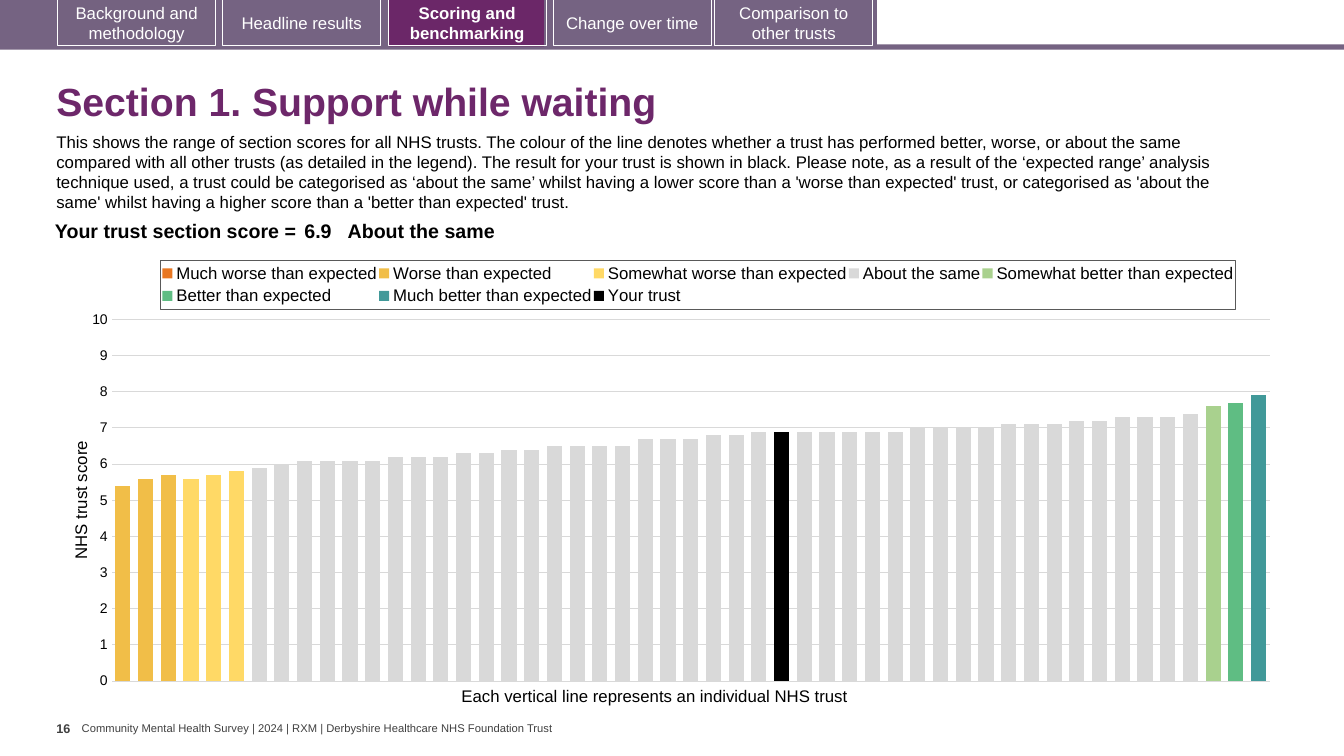
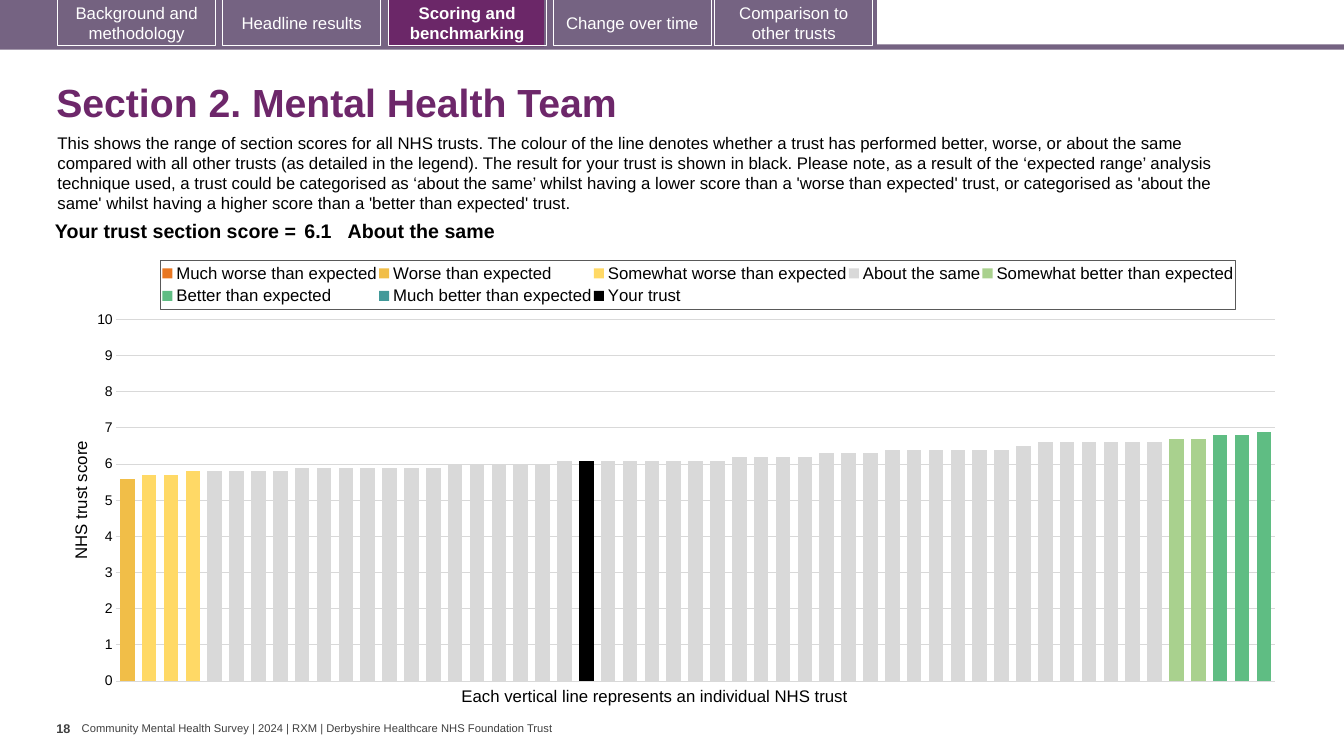
from copy import deepcopy

from lxml import etree
from pptx import Presentation
from pptx import util as u
from pptx.chart import data as chart_data
from pptx.dml import color
from pptx.enum import chart as chart_enum, shapes, text
from pptx.oxml import ns

COLOURS = {
    "band": "756382",
    "tab": "746280",
    "active": "6B2768",
    "title": "6D276A",
    "white": "FFFFFF",
    "black": "000000",
    "footer": "404040",
    "grid": "D9D9D9",
    "legend_border": "595959",
}
SERIES_COLOURS = {
    "Much worse than expected": "E87722",
    "Worse than expected": "F1BE48",
    "Somewhat worse than expected": "FFD966",
    "About the same": "D9D9D9",
    "Somewhat better than expected": "A9D18E",
    "Better than expected": "5FBD83",
    "Much better than expected": "419999",
}
TABS = [
    ("Background and methodology", 1.45, "tab"),
    ("Headline results", 5.61, None),
    ("Scoring and benchmarking", 9.78, None),
    ("Change over time", 13.94, "band"),
    ("Comparison to other trusts", 18.01, "band"),
]
ACTIVE_TAB = "Scoring and benchmarking"
FOOTER = "Community Mental Health Survey | 2024 | RXM | Derbyshire Healthcare NHS Foundation Trust"
EXPLANATION = (
    "This shows the range of section scores for all NHS trusts. The colour of the line denotes "
    "whether a trust has performed better, worse, or about the same compared with all other trusts "
    "(as detailed in the legend). The result for your trust is shown in black. Please note, as a "
    "result of the ‘expected range’ analysis technique used, a trust could be categorised as "
    "‘about the same’ whilst having a lower score than a 'worse than expected' trust, or "
    "categorised as 'about the same' whilst having a higher score than a 'better than expected' trust."
)
SECTIONS = [
    {
        "title": "Section 1. Support while waiting",
        "page": "16",
        "score": 6.9,
        "trust_index": 29,
        "shift": 0,
        "plot_left": 0.036,
        "bands": {
            "Worse than expected": [5.4, 5.6, 5.7],
            "Somewhat worse than expected": [5.6, 5.7, 5.8],
            "About the same": [
                5.9, 6, 6.1, 6.1, 6.1, 6.1, 6.2, 6.2, 6.2, 6.3, 6.3, 6.4, 6.4, 6.5,
                6.5, 6.5, 6.5, 6.7, 6.7, 6.7, 6.8, 6.8, 6.9, 6.9, 6.9, 6.9, 6.9, 6.9,
                6.9, 7, 7, 7, 7, 7.1, 7.1, 7.1, 7.2, 7.2, 7.3, 7.3, 7.3, 7.4,
            ],
            "Somewhat better than expected": [7.6],
            "Better than expected": [7.7],
            "Much better than expected": [7.9],
        },
    },
    {
        "title": "Section 2. Mental Health Team",
        "page": "18",
        "score": 6.1,
        "trust_index": 21,
        "shift": 0.03,
        "plot_left": 0.04,
        "bands": {
            "Worse than expected": [5.6],
            "Somewhat worse than expected": [5.7, 5.7, 5.8],
            "About the same": [
                5.8, 5.8, 5.8, 5.8, 5.9, 5.9, 5.9, 5.9, 5.9, 5.9, 5.9, 6, 6, 6, 6, 6,
                6.1, 6.1, 6.1, 6.1, 6.1, 6.1, 6.1, 6.1, 6.2, 6.2, 6.2, 6.2, 6.3, 6.3,
                6.3, 6.4, 6.4, 6.4, 6.4, 6.4, 6.4, 6.5, 6.6, 6.6, 6.6, 6.6, 6.6, 6.6,
            ],
            "Somewhat better than expected": [6.7, 6.7],
            "Better than expected": [6.8, 6.8, 6.9],
        },
    },
]


def rgb(name):
    return color.RGBColor.from_string(COLOURS.get(name, name))


def box(left, top, width, height):
    return [u.Cm(length) for length in (left, top, width, height)]


def style_font(font, size, colour="black", bold=False, name="Arial"):
    font.name = name
    font.size = u.Pt(size)
    font.bold = bold
    font.color.rgb = rgb(colour)


def add_run(paragraph, content, size, colour="black", bold=False):
    run = paragraph.add_run()
    run.text = content
    style_font(run.font, size, colour, bold)


def add_text(slide, position, content, size, colour="black", bold=False, wrap=True,
             middle=False, insets=(0.25, 0.13), spacing=None):
    frame = slide.shapes.add_textbox(*box(*position)).text_frame
    frame.word_wrap = wrap
    frame.vertical_anchor = text.MSO_ANCHOR.MIDDLE if middle else text.MSO_ANCHOR.TOP
    frame.margin_left = frame.margin_right = u.Cm(insets[0])
    frame.margin_top = frame.margin_bottom = u.Cm(insets[1])
    paragraph = frame.paragraphs[0]
    paragraph.line_spacing = spacing
    add_run(paragraph, content, size, colour, bold)


def add_rectangle(slide, position, fill=None, line=None):
    shape = slide.shapes.add_shape(shapes.MSO_SHAPE.RECTANGLE, *box(*position))
    shape.shadow.inherit = False
    if fill:
        shape.fill.solid()
        shape.fill.fore_color.rgb = rgb(fill)
    else:
        shape.fill.background()
    if line:
        shape.line.color.rgb = rgb(line)
        shape.line.width = u.Pt(0.75)
    else:
        shape.line.fill.background()
    return shape


def add_tab(slide, label, left, fill):
    active = label == ACTIVE_TAB
    if active:
        add_rectangle(slide, (left + 0.02, 0, 3.91, 1.17), "active")
    tab = add_rectangle(slide, (left, -0.03, 3.99, 1.19), fill, "white")
    frame = tab.text_frame
    frame.word_wrap = True
    frame.vertical_anchor = text.MSO_ANCHOR.MIDDLE
    frame.paragraphs[0].alignment = text.PP_ALIGN.CENTER
    add_run(frame.paragraphs[0], label, 12, "white", active)


def add_frame(slide, page):
    add_text(slide, (2.06, 18.19, 12.01, 0.33), FOOTER, 8, "footer",
             wrap=False, middle=True, insets=(0, 0))
    add_rectangle(slide, (0, 1.12, 33.87, 0.13), "band")
    add_rectangle(slide, (0, 0, 22.1, 1.19), "band")
    for label, left, fill in TABS:
        add_tab(slide, label, left, fill)
    add_text(slide, (1.42, 18.03, 0.64, 1.02), page, 9, "footer", True,
             wrap=False, insets=(0, 0.13))


def add_score_table(slide, score):
    table = slide.shapes.add_table(1, 3, *box(0.89, 5.46, 29.69, 0.79)).table
    table.first_row = table.horz_banding = False
    columns = [
        ("Your trust section score =", 6.68, 0.1, text.PP_ALIGN.RIGHT),
        (str(score), 1.19, 0.1, text.PP_ALIGN.LEFT),
        ("About the same", 21.82, 0, text.PP_ALIGN.LEFT),
    ]
    for index, (content, width, inset, alignment) in enumerate(columns):
        table.columns[index].width = u.Cm(width)
        cell = table.cell(0, index)
        cell.fill.background()
        cell.margin_left = cell.margin_right = u.Cm(inset)
        cell.margin_top = cell.margin_bottom = u.Cm(0.1)
        paragraph = cell.text_frame.paragraphs[0]
        paragraph.alignment = alignment
        add_run(paragraph, content, 14, bold=True)


def build_chart_data(section):
    bands = section["bands"]
    total = sum(len(values) for values in bands.values())
    data = chart_data.CategoryChartData()
    data.categories = [str(number) for number in range(1, total + 1)]
    start = 0
    for name in SERIES_COLOURS:
        values = bands.get(name, [])
        end = start + len(values)
        data.add_series(name, [None] * start + values + [None] * (total - end))
        start = end
    trust = [None] * total
    trust[section["trust_index"]] = section["score"]
    data.add_series("Your trust", trust)
    return data


def make_layout(left, top, width, height, inner=False):
    layout = etree.Element(ns.qn("c:layout"))
    manual = etree.SubElement(layout, ns.qn("c:manualLayout"))
    settings = [("layoutTarget", "inner")] if inner else []
    settings += [("xMode", "edge"), ("yMode", "edge"),
                 ("x", left), ("y", top), ("w", width), ("h", height)]
    for tag, value in settings:
        etree.SubElement(manual, ns.qn("c:" + tag)).set("val", str(value))
    return layout


def set_layout(parent, index, layout):
    for existing in parent.findall(ns.qn("c:layout")):
        parent.remove(existing)
    parent.insert(index, layout)


def move_trust_to_right_axis(plot_area):
    columns = plot_area.find(ns.qn("c:barChart"))
    right_columns = deepcopy(columns)
    columns.remove(columns.findall(ns.qn("c:ser"))[-1])
    for series in right_columns.findall(ns.qn("c:ser"))[:-1]:
        right_columns.remove(series)
    columns.addnext(right_columns)

    category_axis = deepcopy(plot_area.find(ns.qn("c:catAx")))
    value_axis = deepcopy(plot_area.find(ns.qn("c:valAx")))
    for tag in ("c:majorGridlines", "c:title"):
        value_axis.remove(value_axis.find(ns.qn(tag)))
    for tag, value in [("axPos", "r"), ("majorTickMark", "out"),
                       ("tickLblPos", "none"), ("crosses", "max")]:
        value_axis.find(ns.qn("c:" + tag)).set("val", value)
    category_id, value_id = "50010", "50020"
    for reference, value in zip(right_columns.findall(ns.qn("c:axId")), (category_id, value_id)):
        reference.set("val", value)
    for axis, own, other in [(value_axis, value_id, category_id),
                             (category_axis, category_id, value_id)]:
        axis.find(ns.qn("c:axId")).set("val", own)
        axis.find(ns.qn("c:crossAx")).set("val", other)
        plot_area.find(ns.qn("c:valAx")).addnext(axis)


def style_legend(chart):
    chart.has_legend = True
    chart.legend.position = chart_enum.XL_LEGEND_POSITION.TOP
    chart.legend.include_in_layout = False
    style_font(chart.legend.font, 12)
    legend = chart.element.find(".//" + ns.qn("c:legend"))
    set_layout(legend, 1, make_layout(0.076, 0.025, 0.878, 0.11))
    properties = etree.Element(ns.qn("c:spPr"))
    line = etree.SubElement(properties, ns.qn("a:ln"), w=str(u.Pt(0.75)))
    fill = etree.SubElement(line, ns.qn("a:solidFill"))
    etree.SubElement(fill, ns.qn("a:srgbClr"), val=COLOURS["legend_border"])
    legend.find(ns.qn("c:txPr")).addprevious(properties)


def style_axes(chart):
    chart.category_axis.visible = False
    axis = chart.value_axis
    axis.minimum_scale, axis.maximum_scale, axis.major_unit = 0, 10, 1
    axis.major_tick_mark = chart_enum.XL_TICK_MARK.NONE
    axis.format.line.fill.background()
    axis.major_gridlines.format.line.color.rgb = rgb("grid")
    axis.major_gridlines.format.line.width = u.Pt(0.75)
    style_font(axis.tick_labels.font, 10)
    add_run(axis.axis_title.text_frame.paragraphs[0], "NHS trust score", 12)
    body = chart.element.find(".//" + ns.qn("c:valAx")).find(".//" + ns.qn("a:bodyPr"))
    body.set("rot", "-5400000")
    body.set("vert", "horz")


def add_score_chart(slide, section):
    chart = slide.shapes.add_chart(chart_enum.XL_CHART_TYPE.COLUMN_CLUSTERED,
                                   *box(1.7, 6.27, 30.86, 11.28), build_chart_data(section)).chart
    chart.has_title = False
    style_font(chart.font, 10, name="Calibri")
    plot = chart.plots[0]
    plot.gap_width, plot.overlap = 50, 100
    plot.vary_by_categories = False
    for series, colour in zip(plot.series, [*SERIES_COLOURS.values(), "black"]):
        series.format.fill.solid()
        series.format.fill.fore_color.rgb = rgb(colour)
    style_axes(chart)
    style_legend(chart)
    plot_area = chart.element.find(".//" + ns.qn("c:plotArea"))
    set_layout(plot_area, 0, make_layout(section["plot_left"], 0.158, 0.946, 0.808, inner=True))
    move_trust_to_right_axis(plot_area)


def add_section_slide(presentation, section):
    slide = presentation.slides.add_slide(presentation.slide_layouts[6])
    shift = section["shift"]
    add_frame(slide, section["page"])
    add_text(slide, (1.17, 1.7 + shift, 31.72, 1.83), section["title"], 28, "title", True,
             middle=True, spacing=0.9)
    add_text(slide, (1.17 + shift, 3.18 + shift, 30.81, 2.31), EXPLANATION, 12)
    add_text(slide, (11.38, 17.15, 10.44, 0.76),
             "Each vertical line represents an individual NHS trust", 12, wrap=False)
    add_score_chart(slide, section)
    add_score_table(slide, section["score"])


def main():
    presentation = Presentation()
    presentation.slide_width, presentation.slide_height = u.Cm(33.87), u.Cm(19.05)
    for section in SECTIONS:
        add_section_slide(presentation, section)
    presentation.save("out.pptx")


if __name__ == "__main__":
    main()
